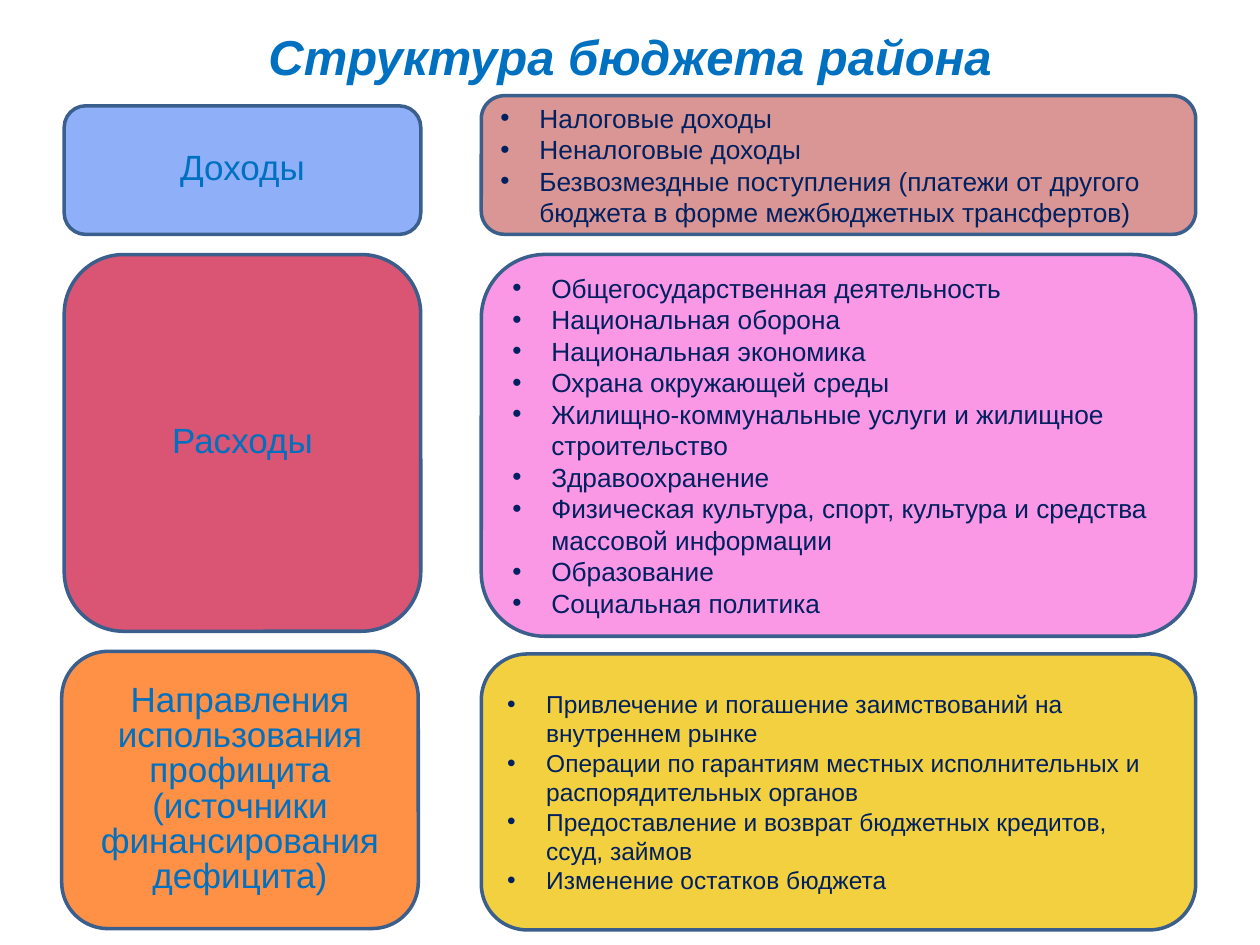
from lxml import etree
from pptx import Presentation
from pptx.dml.color import RGBColor
from pptx.enum.shapes import MSO_SHAPE
from pptx.enum.text import MSO_ANCHOR, PP_ALIGN
from pptx.oxml.ns import qn
from pptx.util import Inches, Pt

ROUNDED = MSO_SHAPE.ROUNDED_RECTANGLE
MIDDLE = MSO_ANCHOR.MIDDLE
CENTER, LEFT = PP_ALIGN.CENTER, PP_ALIGN.LEFT

BLUE, NAVY, OUTLINE = "0070C0", "002060", "3A5F8C"
LABEL_WIDTH, LIST_LEFT, LIST_WIDTH = 2.83, 3.82, 5.67
BULLET_INDENT = Inches(0.31)


def color(hex_value):
    return RGBColor.from_string(hex_value)


def write_text(shape, lines, size, hex_value, bullets=False, **font_format):
    """Fill the shape with one paragraph per line, centred or bulleted."""
    frame = shape.text_frame
    frame.word_wrap = True
    frame.vertical_anchor = MIDDLE
    frame.text = "\n".join(lines)
    settings = {"name": "Arial", "size": Pt(size), **font_format}
    for paragraph in frame.paragraphs:
        paragraph.alignment = LEFT if bullets else CENTER
        if bullets:
            properties = paragraph._p.get_or_add_pPr()
            properties.set("marL", str(BULLET_INDENT))
            properties.set("indent", str(-BULLET_INDENT))
            etree.SubElement(properties, qn("a:buFont"), typeface="Arial")
            etree.SubElement(properties, qn("a:buChar"), char="•")
        for run in paragraph.runs:
            for name, value in settings.items():
                setattr(run.font, name, value)
            run.font.color.rgb = color(hex_value)


# label: left, top, height, fill; list: top, height, fill, text size
sections = [
    {
        "label": "Доходы",
        "label_box": (0.51, 0.84, 1.02, "8FB0F9"),
        "list_box": (0.76, 1.1, "D99694", 15),
        "items": [
            "Налоговые доходы",
            "Неналоговые доходы",
            "Безвозмездные поступления (платежи от другого бюджета в форме межбюджетных трансфертов)",
        ],
    },
    {
        "label": "Расходы",
        "label_box": (0.51, 2.02, 2.99, "DA5474"),
        "list_box": (2.02, 3.03, "FA98E5", 15),
        "items": [
            "Общегосударственная деятельность",
            "Национальная оборона",
            "Национальная экономика",
            "Охрана окружающей среды",
            "Жилищно-коммунальные услуги и жилищное строительство",
            "Здравоохранение",
            "Физическая культура, спорт, культура и средства массовой информации",
            "Образование",
            "Социальная политика",
        ],
    },
    {
        "label": "Направления использования профицита (источники финансирования дефицита)",
        "label_box": (0.49, 5.17, 2.2, "FF9147"),
        "list_box": (5.19, 2.19, "F2D040", 14),
        "items": [
            "Привлечение и погашение заимствований на внутреннем рынке",
            "Операции по гарантиям местных исполнительных и распорядительных органов",
            "Предоставление и возврат бюджетных кредитов, ссуд, займов",
            "Изменение остатков бюджета",
        ],
    },
]

presentation = Presentation()
presentation.slide_width = Inches(10)
presentation.slide_height = Inches(7.5)
slide = presentation.slides.add_slide(presentation.slide_layouts[6])

title = slide.shapes.add_textbox(Inches(0.5), Inches(0.13), Inches(9), Inches(0.63))
write_text(title, ["Структура бюджета района"], 28, BLUE, bold=True, italic=True)

for section in sections:
    label_left, label_top, label_height, label_fill = section["label_box"]
    list_top, list_height, list_fill, list_size = section["list_box"]
    panels = [
        (label_left, label_top, LABEL_WIDTH, label_height, label_fill,
         [section["label"]], 20, BLUE, False),
        (LIST_LEFT, list_top, LIST_WIDTH, list_height, list_fill,
         section["items"], list_size, NAVY, True),
    ]
    for left, top, width, height, fill, lines, size, text_color, bullets in panels:
        panel = slide.shapes.add_shape(
            ROUNDED, Inches(left), Inches(top), Inches(width), Inches(height))
        panel.shadow.inherit = False
        panel.fill.solid()
        panel.fill.fore_color.rgb = color(fill)
        panel.line.color.rgb = color(OUTLINE)
        panel.line.width = Pt(2)
        write_text(panel, lines, size, text_color, bullets)
        if not bullets:
            panel.text_frame.paragraphs[0].line_spacing = Pt(20)

presentation.save("out.pptx")
